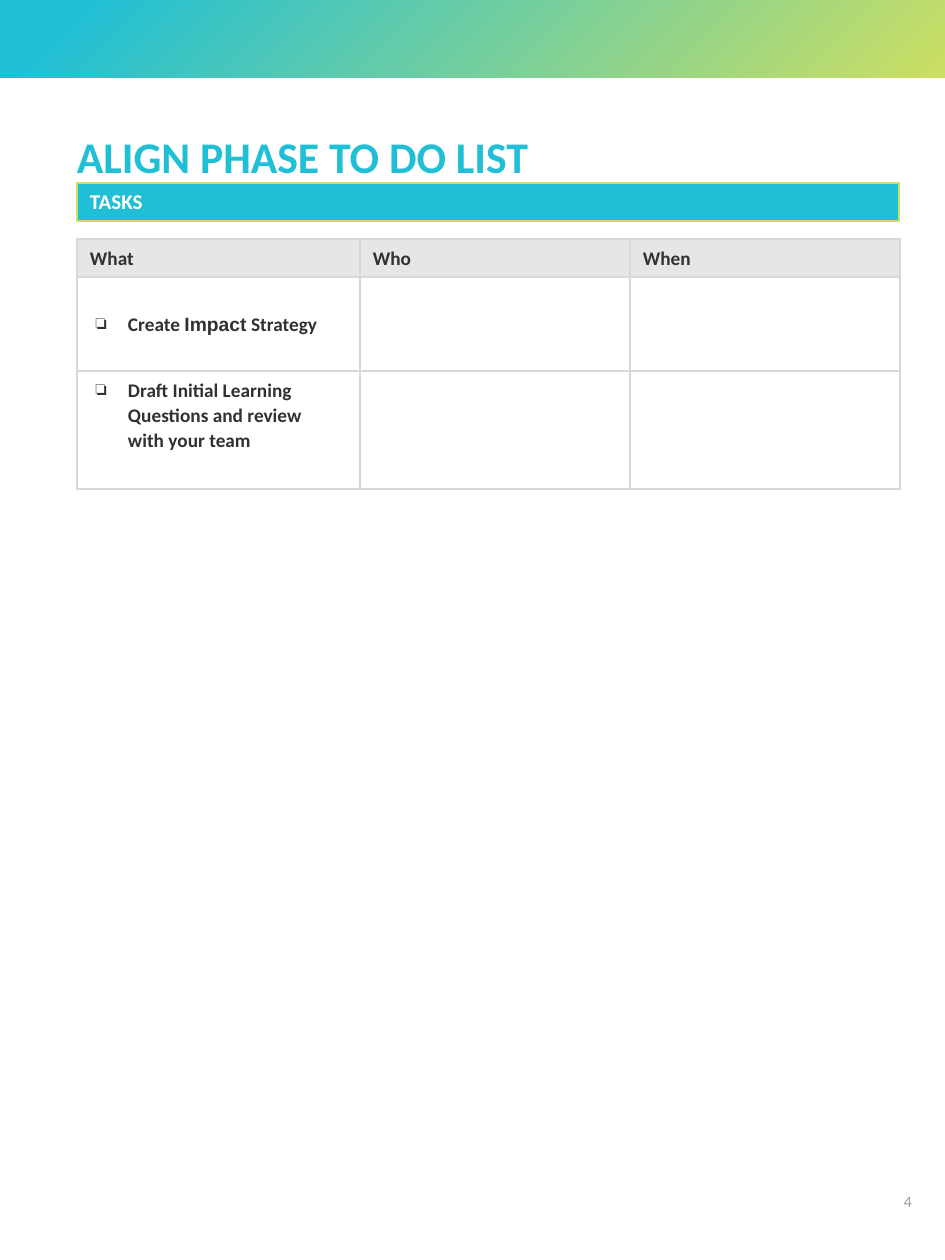
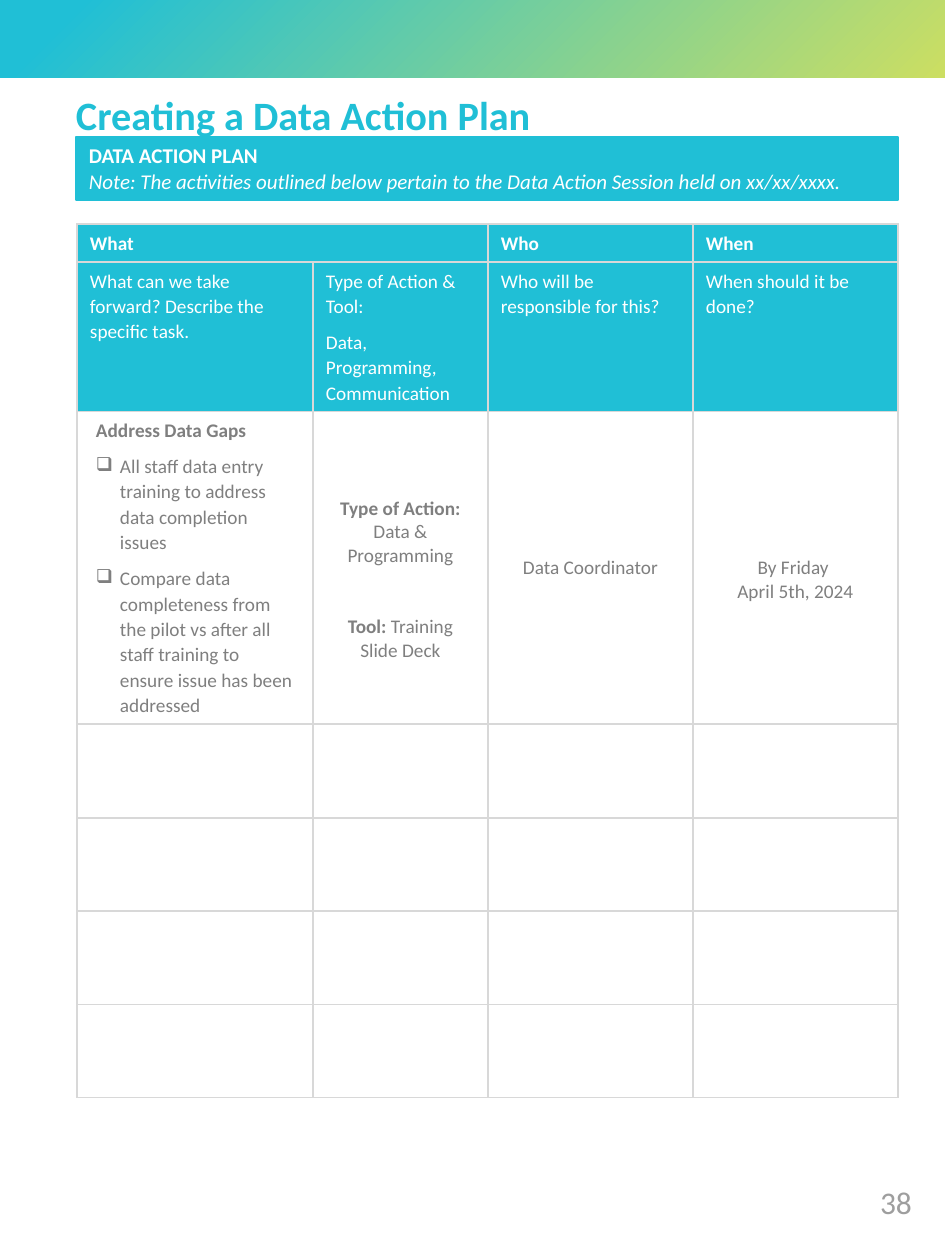
from dataclasses import dataclass
from lxml.etree import SubElement
from pptx import Presentation
from pptx.dml.color import RGBColor
from pptx.enum.shapes import MSO_SHAPE
from pptx.enum.text import MSO_ANCHOR, MSO_AUTO_SIZE, PP_ALIGN
from pptx.oxml.ns import qn
from pptx.util import Emu, Pt

SCALE = 914400 / 126
WIDE, TALL = 945, 1260
EDGE = 77
PAD = (13, 6, 13, 6)
ROOMY = (19, 6, 19, 6)
LOWER = (19, 30, 19, 6)
COLORS = {
    "teal": "20BFD6", "lime": "CCDE62", "white": "FFFFFF", "ink": "313131",
    "gray": "7F7F7F", "pale": "E7E6E6", "rule": "D8D8D8", "page": "9E9E9E",
}


def px(num):
    return Emu(round(num * SCALE))


def rgb(name):
    return RGBColor.from_string(COLORS[name])


@dataclass
class Para:
    """Runs are (text, marks) or (text, marks, font); marks hold b and i."""
    runs: list
    size: float = 11
    tone: str = "ink"
    align: PP_ALIGN = PP_ALIGN.LEFT
    lead: float = 1.07
    before: float = 0
    hang: int = 0
    bullet: str = ""


@dataclass
class Cell:
    paras: list
    fill: str = "white"
    pad: tuple = PAD
    anchor: MSO_ANCHOR = MSO_ANCHOR.TOP


class Deck:
    def __init__(self):
        self.prs = Presentation()
        self.prs.slide_width, self.prs.slide_height = px(WIDE), px(TALL)
        self.slide = None

    def start(self):
        self.slide = self.prs.slides.add_slide(self.prs.slide_layouts[5])

    def text(self, frame, paras):
        for i, item in enumerate(paras):
            para = frame.paragraphs[0] if i == 0 else frame.add_paragraph()
            para.alignment = item.align
            para.line_spacing = item.lead
            para.space_before = Pt(item.before)
            if item.bullet:
                props = para._p.get_or_add_pPr()
                props.set("marL", str(px(item.hang)))
                props.set("indent", str(-px(item.hang)))
                color = SubElement(props, qn("a:buClr"))
                SubElement(color, qn("a:srgbClr"), val=COLORS[item.tone])
                SubElement(props, qn("a:buChar"), char=item.bullet)
            for text, marks, *face in item.runs:
                run = para.add_run()
                run.text = text
                font = run.font
                font.name = face[0] if face else "Calibri"
                font.size = Pt(item.size)
                font.bold, font.italic = "b" in marks, "i" in marks
                font.color.rgb = rgb(item.tone)

    def frame(self, shape, paras, pad=PAD, anchor=MSO_ANCHOR.TOP):
        frame = shape.text_frame
        frame.word_wrap = True
        frame.auto_size = MSO_AUTO_SIZE.NONE
        frame.vertical_anchor = anchor
        (frame.margin_left, frame.margin_top,
         frame.margin_right, frame.margin_bottom) = map(px, pad)
        self.text(frame, paras)

    def title(self, text, left, top, size):
        shape = self.slide.shapes.title
        shape.left, shape.top, shape.width, shape.height = map(px, (left, top, 847, 63))
        self.frame(shape, [Para([(text, "b")], size, "teal")])

    def rect(self, left, top, width, height):
        shape = self.slide.shapes.add_shape(
            MSO_SHAPE.RECTANGLE, *map(px, (left, top, width, height)))
        shape.shadow.inherit = False
        return shape

    def bar(self, left, top, height, line, lines):
        shape = self.rect(left, top, 822, height)
        shape.fill.solid()
        shape.fill.fore_color.rgb = rgb("teal")
        shape.line.color.rgb = rgb(line)
        shape.line.width = Pt(0.75)
        self.frame(shape, [Para([run], 12, "white", lead=1.0) for run in lines])

    def band(self):
        shape = self.rect(0, 0, WIDE, 78)
        shape.line.fill.background()
        shape.fill.gradient()
        shape.fill.gradient_angle = 315
        for stop, place, tone in zip(shape.fill.gradient_stops, (0.08, 1), ("teal", "lime")):
            stop.position = place
            stop.color.rgb = rgb(tone)

    def number(self, text, size):
        box = self.slide.shapes.add_textbox(*map(px, (699, 1168, 213, 67)))
        para = Para([(text, "")], size, "page", PP_ALIGN.RIGHT, 1.0)
        self.frame(box, [para], (0, 0, 0, 0), MSO_ANCHOR.MIDDLE)

    def border(self, cell):
        props = cell._tc.get_or_add_tcPr()
        for i, side in enumerate(("lnL", "lnR", "lnT", "lnB")):
            line = SubElement(props, qn("a:" + side), w=str(Pt(1)))
            fill = SubElement(line, qn("a:solidFill"))
            SubElement(fill, qn("a:srgbClr"), val=COLORS["rule"])
            props.insert(i, line)

    def table(self, top, cols, rows, cells):
        """Draw the grid; places without a given cell stay blank and white."""
        grid = self.slide.shapes.add_table(
            len(rows), len(cols), *map(px, (EDGE, top, sum(cols), sum(rows)))).table
        grid.horz_banding = False
        for col, width in zip(grid.columns, cols):
            col.width = px(width)
        for row, height in zip(grid.rows, rows):
            row.height = px(height)
        for r in range(len(rows)):
            for c in range(len(cols)):
                cell, item = grid.cell(r, c), cells.get((r, c), Cell([]))
                cell.fill.solid()
                cell.fill.fore_color.rgb = rgb(item.fill)
                cell.vertical_anchor = item.anchor
                (cell.margin_left, cell.margin_top,
                 cell.margin_right, cell.margin_bottom) = map(px, item.pad)
                self.text(cell.text_frame, item.paras)
                self.border(cell)
        return grid


def head(text, fill, tone, marks="b"):
    return Cell([Para([(text, marks)], tone=tone)], fill)


def todo(deck):
    deck.start()
    deck.title("ALIGN PHASE TO DO LIST", 64, 120, 25)
    deck.bar(EDGE, 183, 38, "lime", [("TASKS", "b")])
    cells = {(0, c): head(text, "pale", "ink")
             for c, text in enumerate(("What", "Who", "When"))}
    tasks = [
        ([("Create ", "b"), ("Impact", "b", "Arial"), (" Strategy", "b")], MSO_ANCHOR.MIDDLE),
        ([("Draft Initial Learning Questions and review with your team", "b")], MSO_ANCHOR.TOP),
    ]
    for r, (runs, anchor) in enumerate(tasks, 1):
        cells[r, 0] = Cell([Para(runs, hang=32, bullet="❏")], pad=ROOMY, anchor=anchor)
    deck.table(239, (283, 270, 270), (38, 94, 118), cells)
    deck.number("4", 9)
    deck.band()


def plan(deck):
    deck.start()
    deck.title("Creating a Data Action Plan", 63, 81, 23)
    deck.bar(76, 137, 63, "teal", [
        ("DATA ACTION PLAN", "b"),
        ("Note: The activities outlined below pertain to the Data Action Session "
         "held on xx/xx/xxxx.", "i"),
    ])

    def mid(*runs, before=0):
        return Para(list(runs), tone="gray", align=PP_ALIGN.CENTER, lead=1.0, before=before)

    def check(text):
        return Para([(text, "")], tone="gray", before=6, hang=24, bullet="❑")

    cells = {(0, c): head(text, "teal", "white")
             for c, text in enumerate(("What", "", "Who", "When")) if text}
    asks = ("What can we take forward? Describe the specific task.",
            "Type of Action & Tool: ",
            "Who will be responsible for this?",
            "When should it be done?")
    cells.update({(1, c): head(text, "teal", "white", "") for c, text in enumerate(asks)})
    cells[1, 1].paras.append(
        Para([("Data, Programming, Communication", "")], tone="white", before=6))
    row = [
        ([Para([("Address Data Gaps", "b")], tone="gray"),
          check("All staff data entry training to address data completion issues"),
          check("Compare data completeness from the pilot vs after all staff training "
                "to ensure issue has been addressed")], ROOMY),
        ([mid(("Type of Action:", "b"), (" Data & Programming", "")),
          mid(("Tool: ", "b"), ("Training Slide Deck", ""), before=27)], LOWER),
        ([mid(("Data Coordinator", ""))], ROOMY),
        ([mid(("By Friday ", "")), mid(("April 5th, 2024", ""))], LOWER),
    ]
    for c, (paras, pad) in enumerate(row):
        cells[2, c] = Cell(paras, pad=pad, anchor=MSO_ANCHOR.MIDDLE)
    grid = deck.table(224, (236, 175, 205, 205), (38, 146, 306) + (94, 93) * 2, cells)
    grid.cell(0, 0).merge(grid.cell(0, 1))
    deck.number("38", 18)
    deck.band()


def main():
    deck = Deck()
    todo(deck)
    plan(deck)
    deck.prs.save("out.pptx")


if __name__ == "__main__":
    main()
